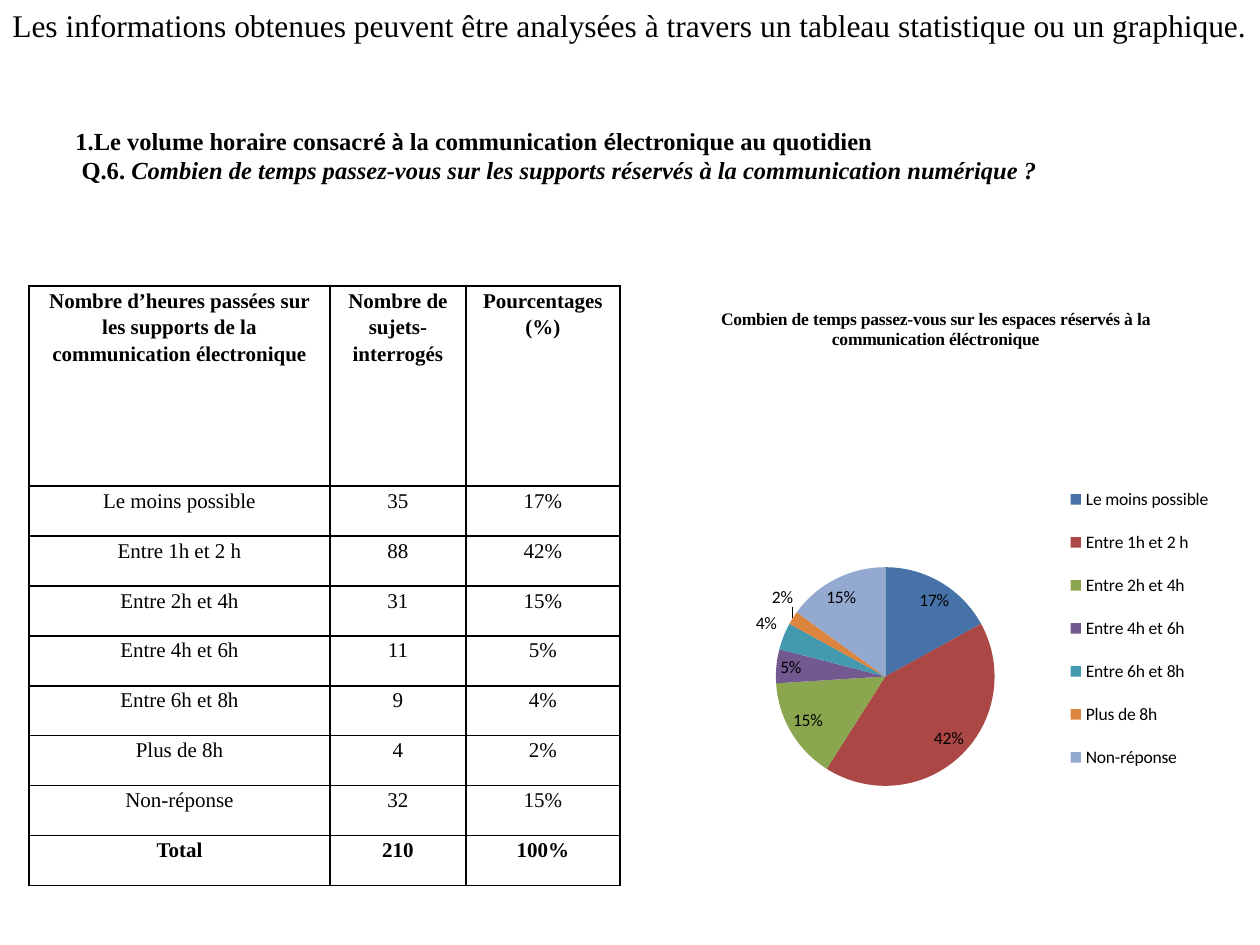
from dataclasses import dataclass

from pptx import Presentation
from pptx.chart.data import CategoryChartData
from pptx.dml.color import RGBColor
from pptx.enum.chart import XL_CHART_TYPE, XL_LABEL_POSITION, XL_LEGEND_POSITION
from pptx.enum.text import MSO_ANCHOR, PP_ALIGN
from pptx.oxml import parse_xml
from pptx.oxml.ns import nsdecls
from pptx.util import Emu, Pt

PIXELS_PER_INCH = 126
SERIF = "Times New Roman"
SANS = "Calibri"
BLACK = "000000"


@dataclass(frozen=True)
class Box:
    left: int
    top: int
    width: int
    height: int


@dataclass(frozen=True)
class TextRun:
    text: str
    font: str = SERIF
    bold: bool = False
    italic: bool = False


@dataclass(frozen=True)
class Answer:
    label: str
    count: int
    percent: int
    color: str


ANSWERS = [
    Answer("Le moins possible", 35, 17, "4672A8"),
    Answer("Entre 1h et 2 h", 88, 42, "AB4744"),
    Answer("Entre 2h et 4h", 31, 15, "8AA64F"),
    Answer("Entre 4h et 6h", 11, 5, "725990"),
    Answer("Entre 6h et 8h", 9, 4, "4299B0"),
    Answer("Plus de 8h", 4, 2, "DC853E"),
    Answer("Non-réponse", 32, 15, "93A9CF"),
]
TABLE_HEADER = [
    "Nombre d’heures passées sur les supports de la communication électronique",
    "Nombre de sujets-interrogés",
    "Pourcentages (%)",
]
COLUMN_WIDTHS = [301, 136, 154]
HEADER_HEIGHT = 200
ROW_HEIGHT = 50
INTRODUCTION = [
    [TextRun("Les informations obtenues peuvent être analysées à travers "
             "un tableau statistique ou un graphique.")],
]
QUESTION = [
    [
        TextRun("Le volume horaire consacr", bold=True),
        TextRun("é à", SANS, bold=True),
        TextRun(" la communication ", bold=True),
        TextRun("é", SANS, bold=True),
        TextRun("lectronique au quotidien", bold=True),
    ],
    [
        TextRun(" Q.6. ", bold=True),
        TextRun("Combien de temps passez-vous sur les supports réservés "
                "à la communication numérique ?", bold=True, italic=True),
    ],
]
CHART_TITLE = ("Combien de temps passez-vous sur les espaces réservés "
               "à la communication éléctronique")


def px(length: int) -> Emu:
    return Emu(round(length * 914400 / PIXELS_PER_INCH))


def rgb(color: str) -> RGBColor:
    return RGBColor.from_string(color)


def place(box: Box) -> tuple:
    return px(box.left), px(box.top), px(box.width), px(box.height)


def style_font(font, name: str, size: int, bold: bool = False, italic: bool = False) -> None:
    font.name = name
    font.size = Pt(size)
    font.bold = bold
    font.italic = italic
    font.color.rgb = rgb(BLACK)


def add_text(slide, box: Box, paragraphs: list[list[TextRun]], size: int):
    text_frame = slide.shapes.add_textbox(*place(box)).text_frame
    text_frame.word_wrap = True
    for index, runs in enumerate(paragraphs):
        paragraph = text_frame.paragraphs[0] if index == 0 else text_frame.add_paragraph()
        for text_run in runs:
            run = paragraph.add_run()
            run.text = text_run.text
            style_font(run.font, text_run.font, size, text_run.bold, text_run.italic)
    return text_frame


def indent_and_number(text_frame) -> None:
    for paragraph in text_frame.paragraphs:
        paragraph.level = 1
        properties = paragraph._p.get_or_add_pPr()
        properties.set("marL", str(px(63)))
        properties.set("indent", "0")
    first_properties = text_frame.paragraphs[0]._p.get_or_add_pPr()
    for markup in (f'<a:buFont {nsdecls("a")} typeface="{SERIF}"/>',
                   f'<a:buAutoNum {nsdecls("a")} type="arabicPeriod"/>'):
        first_properties.append(parse_xml(markup))


def style_cell(cell, text: str, bold: bool) -> None:
    cell.text_frame.text = text
    cell.margin_left = cell.margin_right = px(9)
    cell.margin_top = cell.margin_bottom = 0
    paragraph = cell.text_frame.paragraphs[0]
    paragraph.alignment = PP_ALIGN.CENTER
    paragraph.line_spacing = 1.15
    paragraph.space_after = Pt(10)
    style_font(paragraph.runs[0].font, SERIF, 12, bold)
    properties = cell._tc.get_or_add_tcPr()
    for side in ("lnL", "lnR", "lnT", "lnB"):
        properties.append(parse_xml(
            f'<a:{side} {nsdecls("a")} w="{Pt(1)}"><a:solidFill>'
            f'<a:srgbClr val="{BLACK}"/></a:solidFill></a:{side}>'))
    cell.fill.background()


def add_answer_table(slide, box: Box) -> None:
    total = sum(answer.count for answer in ANSWERS)
    rows = [TABLE_HEADER]
    rows += [[answer.label, str(answer.count), f"{answer.percent}%"] for answer in ANSWERS]
    rows.append(["Total", str(total), "100%"])
    table = slide.shapes.add_table(len(rows), len(TABLE_HEADER), *place(box)).table
    table.first_row = table.horz_banding = False
    for column, width in zip(table.columns, COLUMN_WIDTHS):
        column.width = px(width)
    for row_index, values in enumerate(rows):
        table.rows[row_index].height = px(ROW_HEIGHT if row_index else HEADER_HEIGHT)
        for column_index, value in enumerate(values):
            style_cell(table.cell(row_index, column_index), value,
                       row_index in (0, len(rows) - 1))


def set_layout(element, x: float, y: float, width: float, height: float,
               inner: bool = False) -> None:
    for layout in element.findall("c:layout", element.nsmap):
        element.remove(layout)
    target = '<c:layoutTarget val="inner"/>' if inner else ""
    values = "".join(f'<c:{tag} val="{value}"/>'
                     for tag, value in zip("xywh", (x, y, width, height)))
    layout = parse_xml(
        f'<c:layout {nsdecls("c")}><c:manualLayout>{target}<c:xMode val="edge"/>'
        f'<c:yMode val="edge"/>{values}</c:manualLayout></c:layout>')
    element.insert(0 if inner else 1, layout)


def add_answer_chart(slide, box: Box) -> None:
    data = CategoryChartData(number_format="0")
    data.categories = [answer.label for answer in ANSWERS]
    data.add_series("Series 1", [answer.percent for answer in ANSWERS])
    chart = slide.shapes.add_chart(XL_CHART_TYPE.PIE, *place(box), data).chart
    style_font(chart.font, SANS, 10)
    chart.has_title = True
    chart.chart_title.text_frame.text = CHART_TITLE
    style_font(chart.chart_title.text_frame.paragraphs[0].runs[0].font, SERIF, 10, True)
    chart.chart_title.include_in_layout = False
    chart.has_legend = True
    chart.legend.position = XL_LEGEND_POSITION.RIGHT
    chart.legend.include_in_layout = False
    style_font(chart.legend.font, SANS, 10)
    set_layout(chart.legend._element, 0.7, 0.3, 0.29, 0.54)

    plot = chart.plots[0]
    plot.vary_by_categories = True
    for index, answer in enumerate(ANSWERS):
        fill = plot.series[0].points[index].format.fill
        fill.solid()
        fill.fore_color.rgb = rgb(answer.color)
    plot.has_data_labels = True
    labels = plot.data_labels
    labels.show_percentage = True
    labels.show_value = False
    labels.number_format = "0%"
    labels.number_format_is_linked = False
    labels.position = XL_LABEL_POSITION.BEST_FIT
    style_font(labels.font, SANS, 10)
    set_layout(plot._element.getparent(), 0.23, 0.3, 0.37, 0.7, inner=True)


def main() -> None:
    presentation = Presentation()
    presentation.slide_width = px(1260)
    presentation.slide_height = px(945)
    slide = presentation.slides.add_slide(presentation.slide_layouts[6])
    introduction = add_text(slide, Box(0, 0, 1260, 89), INTRODUCTION, 18)
    introduction.paragraphs[0].alignment = PP_ALIGN.JUSTIFY
    question = add_text(slide, Box(0, 119, 1240, 72), QUESTION, 14)
    question.vertical_anchor = MSO_ANCHOR.MIDDLE
    indent_and_number(question)
    add_answer_table(slide, Box(29, 286, sum(COLUMN_WIDTHS), 600))
    add_answer_chart(slide, Box(640, 286, 591, 601))
    presentation.save("out.pptx")


if __name__ == "__main__":
    main()
